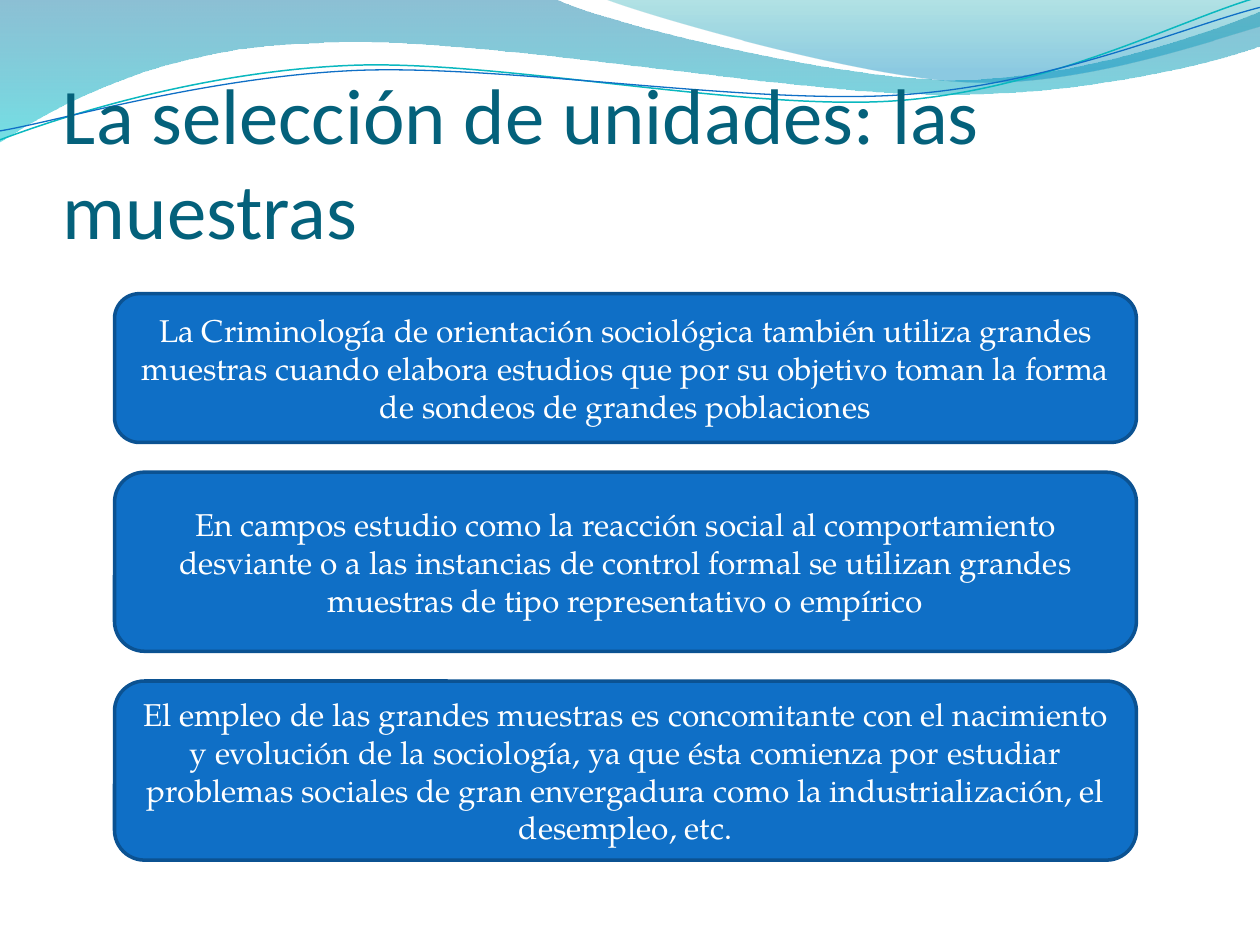
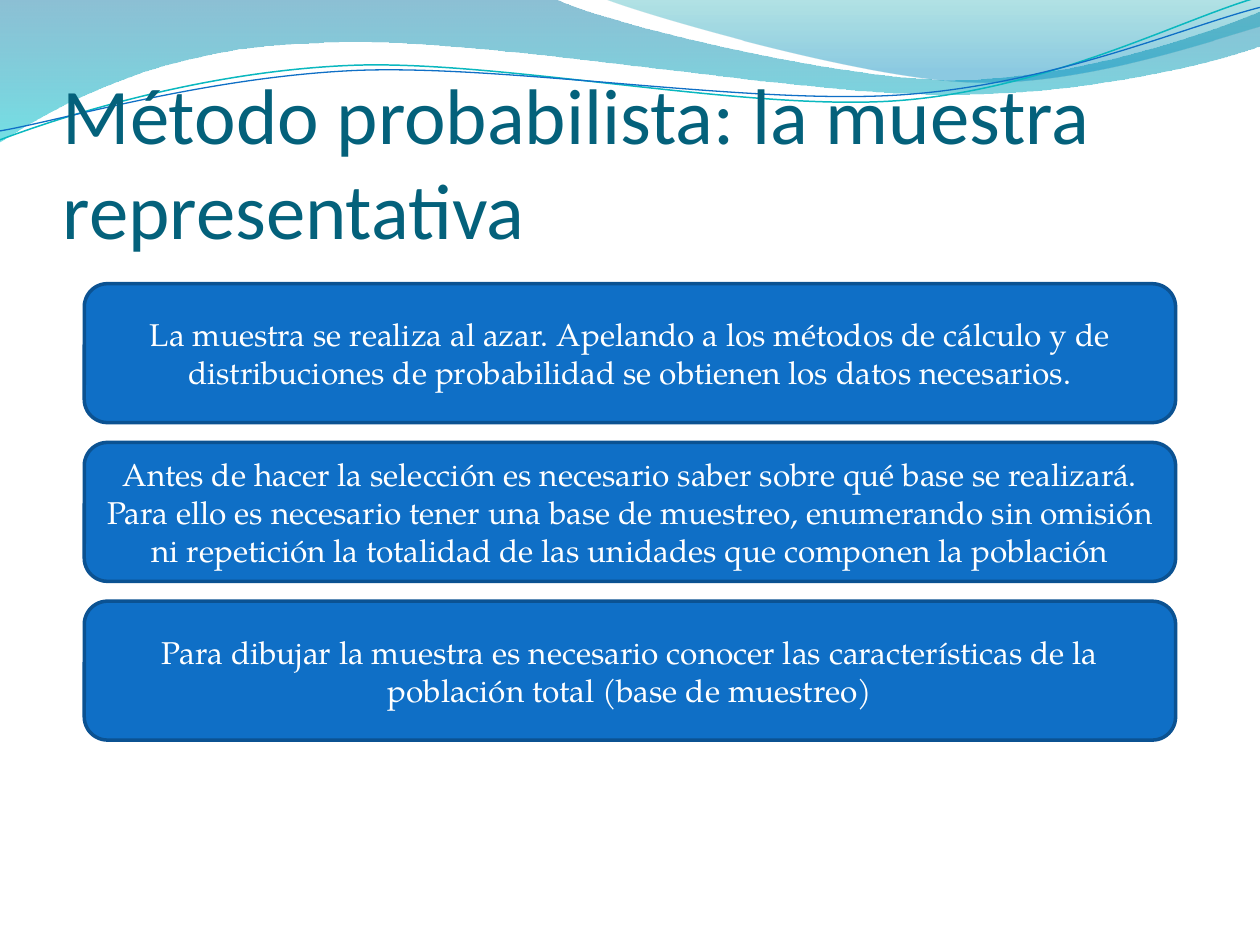
from lxml import etree
from pptx import Presentation
from pptx import util as u
from pptx.dml.color import RGBColor
from pptx.enum import shapes, text
from pptx.oxml.ns import qn

SLIDES = [
    {
        "title": "La selección de unidades: las muestras",
        "left": 2.31, "top": 5.92, "width": 20.6, "gap": 0.6,
        "cards": [
            (3.0, "La Criminología de orientación sociológica también utiliza grandes "
                  "muestras cuando elabora estudios que por su objetivo toman la forma "
                  "de sondeos de grandes poblaciones"),
            (3.61, "En campos estudio como la reacción social al comportamiento "
                   "desviante o a las instancias de control formal se utilizan grandes "
                   "muestras de tipo representativo o empírico"),
            (3.61, "El empleo de las grandes muestras es concomitante con el nacimiento "
                   "y evolución de la sociología, ya que ésta comienza por estudiar "
                   "problemas sociales de gran envergadura como la industrialización, el "
                   "desempleo, etc."),
        ],
    },
    {
        "title": "Método probabilista: la muestra representativa",
        "left": 1.7, "top": 5.72, "width": 22, "gap": 0.4,
        "cards": [
            (2.8, "La muestra se realiza al azar. Apelando a los métodos de cálculo y de "
                  "distribuciones de probabilidad se obtienen los datos necesarios."),
            (2.8, "Antes de hacer la selección es necesario saber sobre qué base se realizará. "
                  "Para ello es necesario tener una base de muestreo, enumerando sin omisión "
                  "ni repetición la totalidad de las unidades que componen la población"),
            (2.8, "Para dibujar la muestra es necesario conocer las características de la "
                  "población total (base de muestreo)"),
        ],
    },
]

TITLE_COLOR, CARD_FILL, CARD_LINE, WHITE = "04617B", "0F6FC6", "0B5292", "FFFFFF"
TITLE_FONT, CARD_FONT = "Calibri", "TeX Gyre Pagella"
TITLE_BOX = (1.27, 1.96, 23.06, 3.18)

# Outlines in cm: a pair is a straight step, six numbers are a Bézier step.
# Gradient stops: position, colour, opacity in percent.
WAVE_BANDS = [
    ([(0, 0), (11.18, -0.03),
      (12.09, 0.43, 16.87, 1.6, 19.25, 1.6), (21.67, 1.6, 24.33, 0.66, 25.4, 0.23),
      (25.43, 0.91),
      (24.97, 1.12, 22.1, 1.93, 18.95, 1.9), (15.8, 1.9, 9.7, 0.71, 6.53, 0.86),
      (3.25, 0.91, 1.17, 2.11, -0.03, 2.87), (0, 0)],
     [(0, "0074A1", 45), (1, "00C6CF", 55)]),
    ([(12.17, -0.03),
      (12.93, 0.28, 17.32, 1.57, 19.53, 1.65), (21.74, 1.75, 24.41, 0.81, 25.4, 0.53),
      (25.4, 0), (12.17, -0.03)],
     [(0, "00A1A9", 30), (0.8, "008BBF", 45)]),
]
WAVE_LINES = [
    ([(0, 2.82), (1.22, 2.36, 4.01, 1.45, 7.04, 1.32),
      (10.03, 1.19, 15.06, 2.26, 18.11, 2.03), (21.16, 1.8, 23.83, 0.38, 25.35, -0.05)],
     "0AB8BF", 0.85),
    ([(0, 2.64), (1.19, 2.44, 4.17, 1.55, 7.19, 1.42),
      (10.24, 1.3, 15.16, 2.13, 18.21, 1.91), (21.23, 1.7, 23.9, 0.53, 25.4, 0.15)],
     "0F6FC6", 0.75),
]


def rgb(color):
    return RGBColor.from_string(color)


def add_outline(slide, outline, close):
    """Draw all points as straight steps, then join each Bézier triple into a curve."""
    points = [(u.Cm(step[i]), u.Cm(step[i + 1]))
              for step in outline for i in range(0, len(step), 2)]
    builder = slide.shapes.build_freeform(*points[0])
    builder.add_line_segments(points[1:], close=close)
    shape = builder.convert_to_shape()
    shape.shadow.inherit = False

    segments = iter(list(shape._element.spPr.iter(qn("a:lnTo"))))
    for step in outline[1:]:
        segment = next(segments)
        if len(step) == 6:
            segment.addprevious(curve := etree.Element(qn("a:cubicBezTo")))
            for part in (segment, next(segments), next(segments)):
                curve.append(part[0])
                part.getparent().remove(part)
    return shape


def add_waves(slide):
    for outline, stops in WAVE_BANDS:
        band = add_outline(slide, outline, True)
        band.line.fill.background()
        band.fill.gradient()
        band.fill.gradient_angle = 270
        for stop, (position, color, _) in zip(band.fill.gradient_stops, stops):
            stop.position = position
            stop.color.rgb = rgb(color)
        colors = band._element.spPr.iter(qn("a:srgbClr"))
        for element, (_, _, opacity) in zip(colors, stops):
            etree.SubElement(element, qn("a:alpha"), val=str(opacity * 1000))
    for outline, color, width in WAVE_LINES:
        wave = add_outline(slide, outline, False)
        wave.fill.background()
        wave.line.color.rgb = rgb(color)
        wave.line.width = u.Pt(width)


def write(shape, content, *, size, font, color, align, anchor):
    frame = shape.text_frame
    frame.word_wrap = True
    frame.vertical_anchor = anchor
    paragraph = frame.paragraphs[0]
    paragraph.alignment = align
    run = paragraph.add_run()
    run.text = content
    run.font.size = u.Pt(size)
    run.font.name = font
    run.font.color.rgb = rgb(color)


def add_title(slide, content):
    box = slide.shapes.add_textbox(*map(u.Cm, TITLE_BOX))
    frame = box.text_frame
    frame.margin_left = frame.margin_right = frame.margin_bottom = 0
    write(box, content, size=45, font=TITLE_FONT, color=TITLE_COLOR,
          align=text.PP_ALIGN.LEFT, anchor=text.MSO_ANCHOR.BOTTOM)


def add_cards(slide, cards, left, top, width, gap):
    for height, content in cards:
        card = slide.shapes.add_shape(shapes.MSO_SHAPE.ROUNDED_RECTANGLE,
                                      *map(u.Cm, (left, top, width, height)))
        card.shadow.inherit = False
        card.fill.solid()
        card.fill.fore_color.rgb = rgb(CARD_FILL)
        card.line.color.rgb = rgb(CARD_LINE)
        card.line.width = u.Pt(2)
        write(card, content, size=18, font=CARD_FONT, color=WHITE,
              align=text.PP_ALIGN.CENTER, anchor=text.MSO_ANCHOR.MIDDLE)
        top += height + gap


def main():
    presentation = Presentation()
    presentation.slide_width, presentation.slide_height = u.Cm(25.4), u.Cm(19.05)
    for content in SLIDES:
        slide = presentation.slides.add_slide(presentation.slide_layouts[6])
        add_waves(slide)
        add_title(slide, content["title"])
        add_cards(slide, content["cards"], content["left"], content["top"],
                  content["width"], content["gap"])
    presentation.save("out.pptx")


if __name__ == "__main__":
    main()
